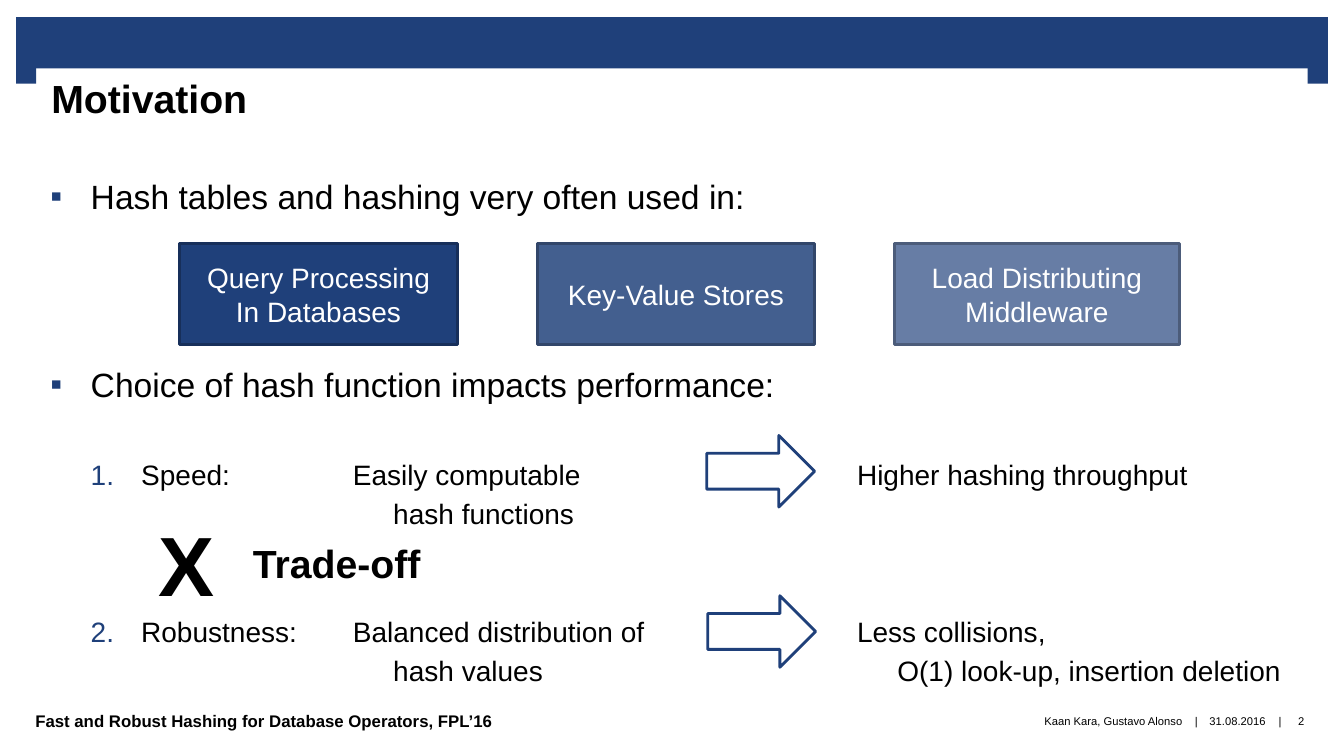
import pptx
import pptx.dml.color
import pptx.enum.shapes
import pptx.enum.text
import pptx.oxml
import pptx.oxml.ns
import pptx.util
from lxml import etree

PX = 9144
RGB = pptx.dml.color.RGBColor
BLUE = RGB(0x1F, 0x40, 0x7A)
BLUE_EDGE = RGB(0x17, 0x2F, 0x5A)
MID_BLUE = RGB(0x43, 0x5F, 0x8F)
MID_BLUE_EDGE = RGB(0x32, 0x46, 0x6A)
PALE_BLUE = RGB(0x67, 0x7D, 0xA5)
PALE_BLUE_EDGE = RGB(0x4C, 0x5C, 0x7A)
BLACK = RGB(0, 0, 0)
WHITE = RGB(0xFF, 0xFF, 0xFF)
SHAPE = pptx.enum.shapes.MSO_SHAPE
ALIGN = pptx.enum.text.PP_ALIGN
ANCHOR = pptx.enum.text.MSO_ANCHOR
NO_FIT = pptx.enum.text.MSO_AUTO_SIZE.NONE


def apply(target, values):
    for name, value in values.items():
        setattr(target, name, value)


def place(shape, box):
    names = ("left", "top", "width", "height")
    apply(shape, {name: length * PX for name, length in zip(names, box)})


def format_frame(frame, margins, anchor, wrap=True):
    left, top, right, bottom = (margin * PX for margin in margins)
    apply(frame, {"margin_left": left, "margin_top": top, "margin_right": right,
                  "margin_bottom": bottom, "vertical_anchor": anchor,
                  "word_wrap": wrap, "auto_size": NO_FIT})


def write(frame, lines, size, color=BLACK, bold=False, align=ALIGN.LEFT):
    for index, line in enumerate(lines):
        paragraph = frame.paragraphs[0] if index == 0 else frame.add_paragraph()
        paragraph.text = line
        paragraph.alignment = align
        format_font(paragraph, size, color, bold)


def format_font(paragraph, size, color=BLACK, bold=False):
    apply(paragraph.font, {"name": "Arial", "size": pptx.util.Pt(size), "bold": bold})
    paragraph.font.color.rgb = color


def add_figure(slide, kind, box, fill, edge=None):
    shape = slide.shapes.add_shape(kind, *(length * PX for length in box))
    shape.shadow.inherit = False
    shape.fill.solid()
    shape.fill.fore_color.rgb = fill
    if edge is None:
        shape.line.fill.background()
    else:
        shape.line.color.rgb = edge
        shape.line.width = pptx.util.Pt(2)
    return shape


def add_label(slide, box, text, size, bold=False, align=ALIGN.LEFT,
              margins=(0, 0, 0, 0), anchor=ANCHOR.MIDDLE, wrap=True):
    label = slide.shapes.add_textbox(*(length * PX for length in box))
    format_frame(label.text_frame, margins, anchor, wrap)
    write(label.text_frame, [text], size, bold=bold, align=align)


def add_banner(slide, box):
    left, top, width, height = box
    bar_height, tab_width, tab_height = 51, 20, 18
    add_figure(slide, SHAPE.RECTANGLE, (left, top, width, bar_height), BLUE)
    for tab_left in (left, left + width - tab_width):
        add_figure(slide, SHAPE.RECTANGLE,
                   (tab_left, top + height - tab_height, tab_width, tab_height), BLUE)


def fill_title(slide, box):
    title = slide.shapes.title
    place(title, box)
    title.fill.solid()
    title.fill.fore_color.rgb = WHITE
    format_frame(title.text_frame, (16, 6, 16, 0), ANCHOR.TOP)
    write(title.text_frame, ["Motivation"], 28, bold=True)


def set_list_format(paragraph, margin, indent, bullet, tabs):
    properties = paragraph._p.get_or_add_pPr()
    properties.set("marL", str(margin * PX))
    properties.set("indent", str(indent * PX))

    def add(parent, tag, **attributes):
        return etree.SubElement(parent, pptx.oxml.ns.qn(tag), attributes)

    add(add(properties, "a:buClr"), "a:srgbClr", val=str(BLUE))
    add(properties, "a:buFont", typeface="Arial")
    if isinstance(bullet, int):
        add(properties, "a:buAutoNum", type="arabicPeriod", startAt=str(bullet))
    else:
        add(properties, "a:buChar", char=bullet)
    if tabs:
        stops = add(properties, "a:tabLst")
        for position in tabs:
            add(stops, "a:tab", pos=str(position * PX), algn="l")


def fill_body(slide, box):
    body = slide.placeholders[1]
    place(body, box)
    frame = body.text_frame
    format_frame(frame, (15, 0, 16, 0), ANCHOR.TOP)
    styles = {
        "point": {"level": 0, "size": 24, "margin": 40, "indent": -40,
                  "spacing": 1.0, "tabs": ()},
        "item": {"level": 1, "size": 20, "margin": 90, "indent": -50,
                 "spacing": 1.17, "tabs": (300, 340, 800, 840)},
    }
    entries = [
        ("point", "▪", 0, "Hash tables and hashing very often used in:"),
        ("point", "▪", 106, "Choice of hash function impacts performance:"),
        ("item", 1, 34, "Speed:\tEasily computable\tHigher hashing throughput"
                        "\v\t\thash functions"),
        ("item", 2, 56, "Robustness:\tBalanced distribution of\tLess collisions,"
                        "\v\t\thash values\t\tO(1) look-up, insertion deletion"),
    ]
    for index, (kind, bullet, space, text) in enumerate(entries):
        style = styles[kind]
        paragraph = frame.paragraphs[0] if index == 0 else frame.add_paragraph()
        paragraph.text = text
        set_list_format(paragraph, style["margin"], style["indent"], bullet, style["tabs"])
        apply(paragraph, {"level": style["level"], "alignment": ALIGN.LEFT,
                          "line_spacing": style["spacing"],
                          "space_before": pptx.util.Pt(space)})
        format_font(paragraph, style["size"])


def add_uses(slide, box):
    left, top, _, height = box
    uses = [
        (0, 276, ["Query Processing", "In Databases"], BLUE, BLUE_EDGE),
        (355, 275, ["Key-Value Stores"], MID_BLUE, MID_BLUE_EDGE),
        (709, 283, ["Load Distributing", "Middleware"], PALE_BLUE, PALE_BLUE_EDGE),
    ]
    for offset, width, lines, fill, edge in uses:
        card = add_figure(slide, SHAPE.RECTANGLE, (left + offset, top, width, height), fill, edge)
        format_frame(card.text_frame, (10, 5, 10, 5), ANCHOR.MIDDLE)
        write(card.text_frame, lines, 20, WHITE, align=ALIGN.CENTER)


def add_tradeoff(slide, box):
    left, top, _, _ = box
    for x, y in ((571, 159), (570, 0)):
        add_figure(slide, SHAPE.RIGHT_ARROW, (left + x, top + y, 107, 71), WHITE, BLUE)
    add_label(slide, (left, top + 71, 108, 111), "X", 60, True, ALIGN.CENTER, (10, 5, 10, 5))
    add_label(slide, (left + 110, top + 98, 267, 57), "Trade-off", 28, True,
              margins=(10, 5, 10, 5), anchor=ANCHOR.TOP)


def add_footer(slide, box):
    left, top, _, height = box
    add_label(slide, (left, top, 631, height),
              "Fast and Robust Hashing for Database Operators, FPL’16", 12, True)
    details = [
        (631, 507, "Kaan Kara, Gustavo Alonso", ALIGN.RIGHT),
        (1144, 15, "|", ALIGN.CENTER),
        (1159, 67, "31.08.2016", ALIGN.CENTER),
        (1227, 15, "|", ALIGN.CENTER),
        (1236, 39, "2", ALIGN.CENTER),
    ]
    for offset, width, text, align in details:
        add_label(slide, (left + offset, top, width, height), text, 8, align=align, wrap=False)


def main():
    presentation = pptx.Presentation()
    presentation.slide_width = 1333 * PX
    presentation.slide_height = 750 * PX
    slide = presentation.slides.add_slide(presentation.slide_layouts[1])
    add_banner(slide, (16, 17, 1301, 66))
    fill_title(slide, (35, 68, 1262, 106))
    fill_body(slide, (35, 174, 1262, 508))
    add_uses(slide, (178, 242, 992, 100))
    add_tradeoff(slide, (131, 432, 678, 230))
    add_footer(slide, (35, 690, 1275, 50))
    presentation.save("out.pptx")


if __name__ == "__main__":
    main()
